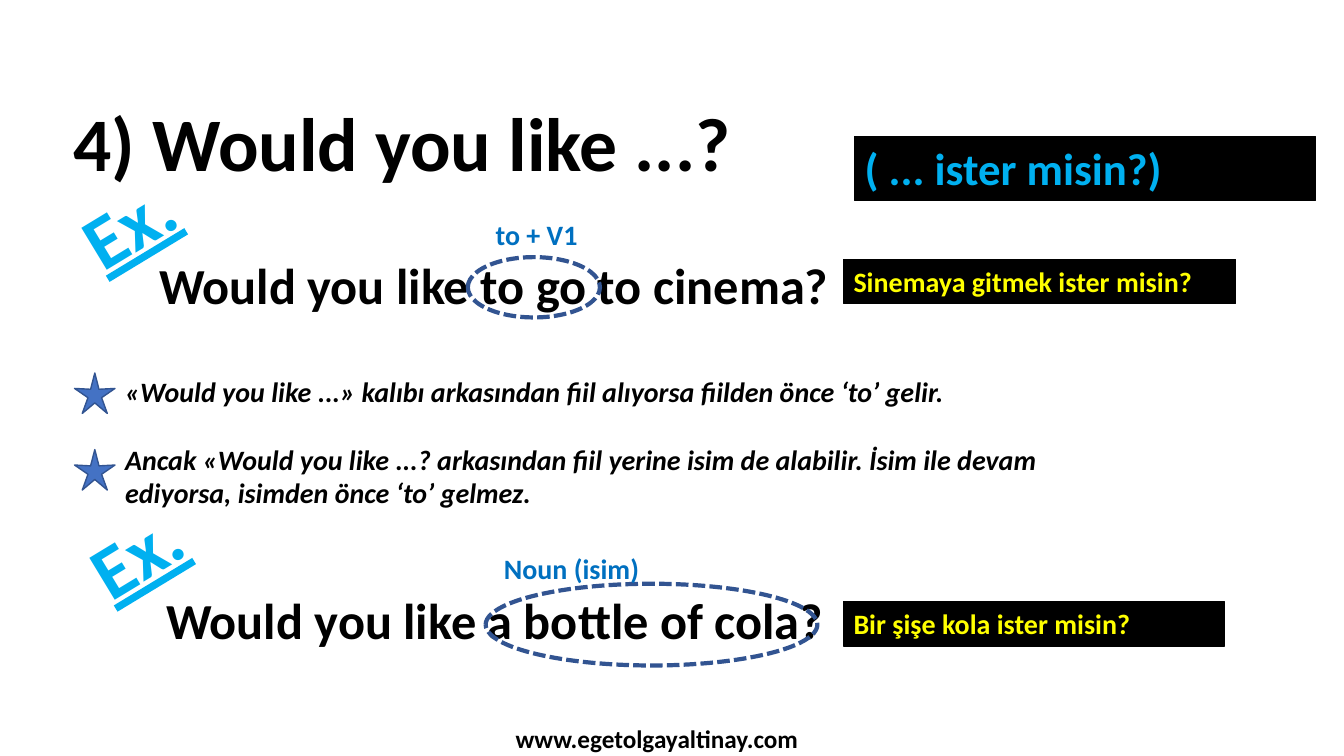
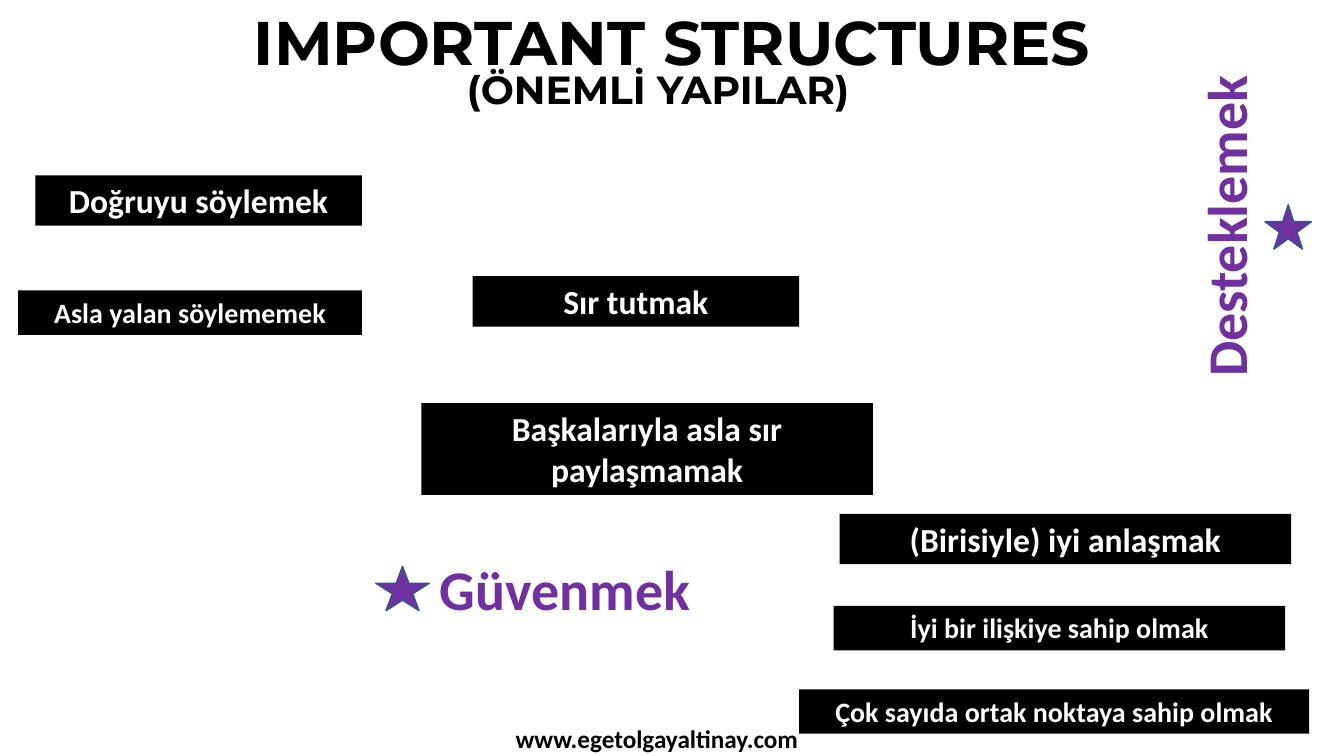
import lxml.etree
import pptx
import pptx.dml.color
import pptx.enum.dml
import pptx.enum.shapes
import pptx.enum.text
import pptx.oxml.ns
import pptx.util

Cm, Pt = pptx.util.Cm, pptx.util.Pt
SHAPE = pptx.enum.shapes.MSO_SHAPE
ALIGN = pptx.enum.text.PP_ALIGN
ANCHOR = pptx.enum.text.MSO_ANCHOR

COLORS = {
    "black": "000000", "white": "FFFFFF", "yellow": "FFFF00",
    "sky": "00B0F0", "label": "0070C0", "star": "4472C4",
    "outline": "325491", "purple": "7030A0",
}
HEIGHTS = {18: 1.02, 20: 1.12, 24: 1.27, 32: 1.63, 36: 1.8, 40: 1.96, 54: 2.57}


def rgb(name):
    return pptx.dml.color.RGBColor.from_string(COLORS[name])


def write(tf, text, size=20, color="black", font="Calibri", align=ALIGN.LEFT,
          anchor=ANCHOR.TOP, wrap=True, italic=False, underline=False,
          line_spacing=None, gap=0, plain=False):
    tf.auto_size = pptx.enum.text.MSO_AUTO_SIZE.NONE
    tf.word_wrap, tf.vertical_anchor = wrap, anchor
    for i, line in enumerate(text.split("\n")):
        p = tf.add_paragraph() if i else tf.paragraphs[0]
        if plain:
            pPr = p._p.get_or_add_pPr()
            pPr.set("marL", "0")
            pPr.set("indent", "0")
            lxml.etree.SubElement(pPr, pptx.oxml.ns.qn("a:buNone"))
        p.alignment = align
        p.space_before = Pt(gap if i else 0)
        if line_spacing:
            p.line_spacing = line_spacing
        r = p.add_run()
        r.text = line
        f = r.font
        f.name, f.size, f.bold = font, Pt(size), True
        f.italic, f.underline = italic, underline
        f.color.rgb = rgb(color)


class Deck:
    def __init__(self):
        self.prs = pptx.Presentation()
        self.prs.slide_width, self.prs.slide_height = Cm(33.87), Cm(19.05)

    def slide(self, layout):
        self.s = self.prs.slides.add_slide(self.prs.slide_layouts[layout])

    def placeholder(self, idx, text, x, y, w, h, **fmt):
        sp = self.s.placeholders[idx]
        sp.left, sp.top, sp.width, sp.height = Cm(x), Cm(y), Cm(w), Cm(h)
        write(sp.text_frame, text, **fmt)

    def text(self, text, x, y, w, h=None, rotation=0, size=20, **fmt):
        sp = self.s.shapes.add_textbox(Cm(x), Cm(y), Cm(w), Cm(h or HEIGHTS[size]))
        sp.rotation = rotation
        write(sp.text_frame, text, size=size, **fmt)

    def shape(self, kind, x, y, w, h, fill=None, line=None, weight=1):
        sp = self.s.shapes.add_shape(kind, Cm(x), Cm(y), Cm(w), Cm(h))
        sp.shadow.inherit = False
        if fill:
            sp.fill.solid()
            sp.fill.fore_color.rgb = rgb(fill)
        else:
            sp.fill.background()
        if line:
            sp.line.color.rgb = rgb(line)
            sp.line.width = Pt(weight)
        else:
            sp.line.fill.background()
        return sp

    def box(self, text, x, y, w, lines=1, size=20, line=None, **fmt):
        h = HEIGHTS[size] + (lines - 1) * 1.04
        sp = self.shape(SHAPE.RECTANGLE, x, y, w, h, "black", line, 0.75)
        write(sp.text_frame, text, size=size, **fmt)

    def star(self, x, y, w, h, fill, point=None):
        sp = self.shape(SHAPE.STAR_5_POINT, x, y, w, h, fill, "outline")
        if point:
            sp.adjustments[0] = point

    def ring(self, x, y, w, h):
        sp = self.shape(SHAPE.OVAL, x, y, w, h, line="outline", weight=3)
        sp.line.dash_style = pptx.enum.dml.MSO_LINE.SQUARE_DOT

    def example(self, tag, sentence, answer, label, ring):
        self.text("Ex.", *tag, 2.84, rotation=328.8, size=54, color="sky",
                  align=ALIGN.CENTER, wrap=False, underline=True)
        self.text(*sentence, size=36)
        self.box(*answer, line="black", color="yellow")
        self.ring(*ring)
        self.text(*label, color="label")

    def footer(self):
        self.text("www.egetolgayaltinay.com", 11.68, 18.11, 9.75, size=18,
                  align=ALIGN.CENTER)


def would_you_like(d):
    d.slide(1)
    d.placeholder(0, "4) Would you like ...?", 1.3, 2.29, 17.68, 2.57, size=54,
                  align=ALIGN.CENTER, wrap=False)
    d.box("( ... ister misin?)", 21.54, 3.43, 11.61, size=32, line="black",
          color="sky")
    d.placeholder(
        1,
        "«Would you like ...» kalıbı arkasından fiil alıyorsa fiilden önce ‘to’ gelir.\n"
        "Ancak «Would you like ...? arkasından fiil yerine isim de alabilir. "
        "İsim ile devam ediyorsa, isimden önce ‘to’ gelmez.",
        2.9, 9.32, 26.06, 3.68, italic=True, gap=24, plain=True)
    for y in (9.4, 11.33):
        d.star(1.88, y, 1.02, 1.02, "star", 0.168)
    d.example((1.8, 4.34),
              ("Would you like to go to cinema?", 3.76, 6.27, 17.6),
              ("Sinemaya gitmek ister misin?", 21.26, 6.53, 9.88),
              ("to + V1", 12.24, 5.36, 3.3),
              (11.79, 6.48, 3.33, 1.52))
    d.example((2, 12.65),
              ("Would you like a bottle of cola?", 3.94, 14.71, 20.93),
              ("Bir şişe kola ister misin?", 21.26, 15.16, 9.6),
              ("Noun (isim)", 12.45, 13.77, 6.71),
              (12.24, 14.71, 8.36, 2.06))
    d.footer()


def important_structures(d):
    d.slide(5)
    heading = dict(font="Montserrat", align=ALIGN.CENTER, anchor=ANCHOR.MIDDLE,
                   line_spacing=0.9)
    d.placeholder(0, "IMPORTANT STRUCTURES", 2.34, -0.69, 29.21, 3.68, size=44,
                  **heading)
    d.text("(ÖNEMLİ YAPILAR)", 1.98, 1.4, 29.21, 1.83, size=28, **heading)
    for text, x, y, w, size, lines in (
        ("Doğruyu söylemek", 0.89, 4.42, 8.23, 24, 1),
        ("Asla yalan söylememek", 0.46, 7.32, 8.66, 20, 1),
        ("Sır tutmak", 11.91, 6.96, 8.23, 24, 1),
        ("Başkalarıyla asla sır paylaşmamak", 10.62, 10.16, 11.38, 24, 2),
        ("(Birisiyle) iyi anlaşmak", 21.16, 12.95, 11.38, 24, 1),
        ("İyi bir ilişkiye sahip olmak", 21.01, 15.27, 11.38, 20, 1),
        ("Çok sayıda ortak noktaya sahip olmak", 20.14, 17.37, 12.85, 20, 1),
    ):
        d.box(text, x, y, w, lines, size, color="white", align=ALIGN.CENTER)
    verb = dict(size=40, color="purple", align=ALIGN.CENTER)
    d.text("Güvenmek", 10.8, 13.84, 6.88, wrap=False, **verb)
    d.star(9.47, 14.27, 1.35, 1.12, "purple")
    d.text("Desteklemek", 26.54, 4.72, 8.71, rotation=270, **verb)
    d.star(31.88, 5.16, 1.17, 1.12, "purple")
    d.footer()


def main():
    d = Deck()
    would_you_like(d)
    important_structures(d)
    d.prs.save("out.pptx")


if __name__ == "__main__":
    main()
